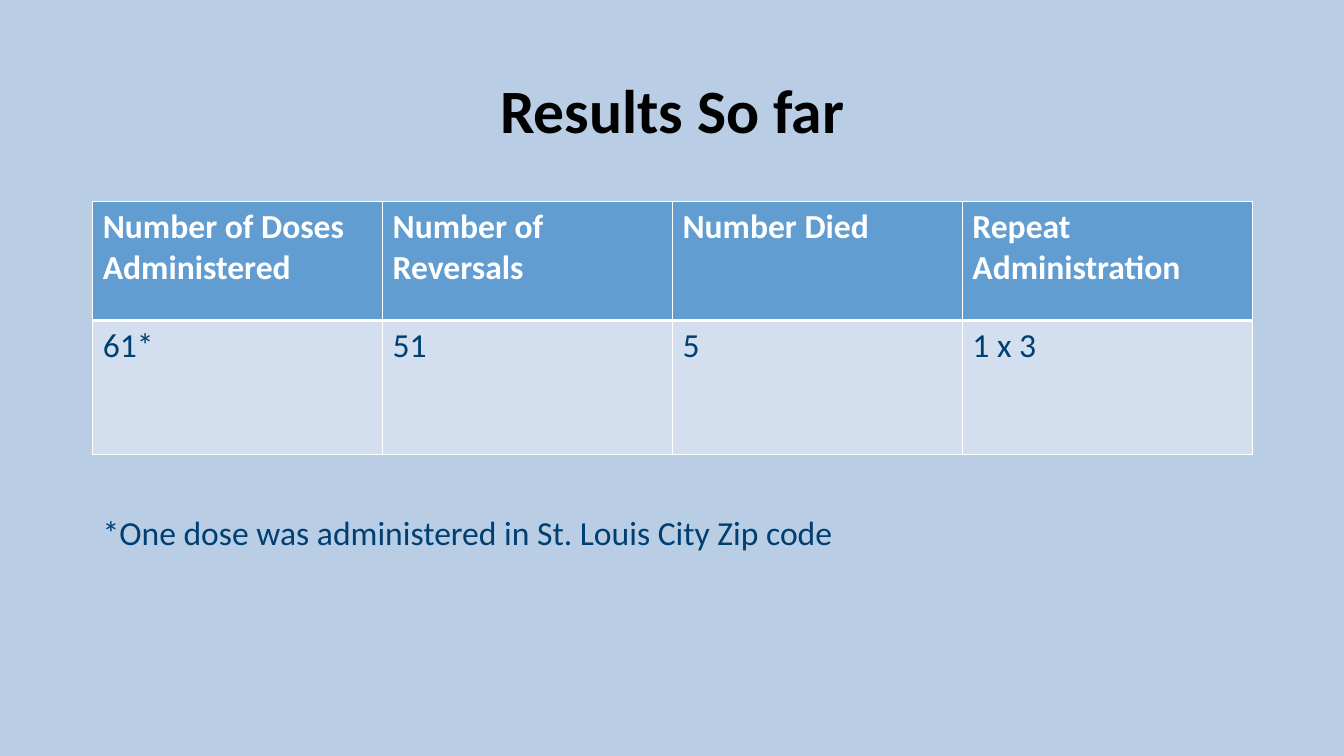
from lxml import etree
from pptx import Presentation
from pptx import util as u
from pptx.dml.color import RGBColor
from pptx.enum import text
from pptx.oxml.ns import qn

PX = 9144  # 100 px to the inch
WHITE, NAVY = "FFFFFF", "003F72"


def color(code):
    return RGBColor.from_string(code)


def write(frame, words, size=24, ink=NAVY, bold=False, align=None, line=None):
    """Fill a text frame with one formatted paragraph."""
    frame.word_wrap = True
    para = frame.paragraphs[0]
    para.alignment = align
    para.line_spacing = line
    run = para.add_run()
    run.text = words
    run.font.name = "Calibri"
    run.font.size = u.Pt(size)
    run.font.bold = bold
    run.font.color.rgb = color(ink)


deck = Presentation()
deck.slide_width, deck.slide_height = 1333 * PX, 750 * PX
slide = deck.slides.add_slide(deck.slide_layouts[6])
slide.background.fill.solid()
slide.background.fill.fore_color.rgb = color("B9CDE5")

# Title
title = slide.shapes.add_textbox(92 * PX, 40 * PX, 1150 * PX, 145 * PX)
title.text_frame.vertical_anchor = text.MSO_ANCHOR.MIDDLE
write(title.text_frame, "Results So far", size=44, ink="000000", bold=True,
      align=text.PP_ALIGN.CENTER, line=0.9)

# Results table: fill, ink, bold, height, top and bottom border, cells
rows = [
    ("629DD1", WHITE, True, 118, 1, 3,
     ["Number of Doses Administered", "Number of Reversals",
      "Number Died", "Repeat Administration"]),
    ("D3DFEE", NAVY, False, 133, 3, 1, ["61*", "51", "5", "1 x 3"]),
]
table = slide.shapes.add_table(2, 4, 92 * PX, 200 * PX, 1150 * PX, 251 * PX).table
for r, (fill, ink, bold, height, top, base, words) in enumerate(rows):
    table.rows[r].height = height * PX
    for c, word in enumerate(words):
        cell = table.cell(r, c)
        write(cell.text_frame, word, ink=ink, bold=bold)
        props = cell._tc.get_or_add_tcPr()
        for side, width in (("L", 1), ("R", 1), ("T", top), ("B", base)):
            edge = etree.SubElement(props, qn(f"a:ln{side}"), w=str(u.Pt(width)))
            solid = etree.SubElement(edge, qn("a:solidFill"))
            etree.SubElement(solid, qn("a:srgbClr"), val=WHITE)
        cell.fill.solid()
        cell.fill.fore_color.rgb = color(fill)

# Footnote
note = slide.shapes.add_textbox(92 * PX, 503 * PX, 750 * PX, 91 * PX)
write(note.text_frame, "*One dose was administered in St. Louis City Zip code")

deck.save("out.pptx")
